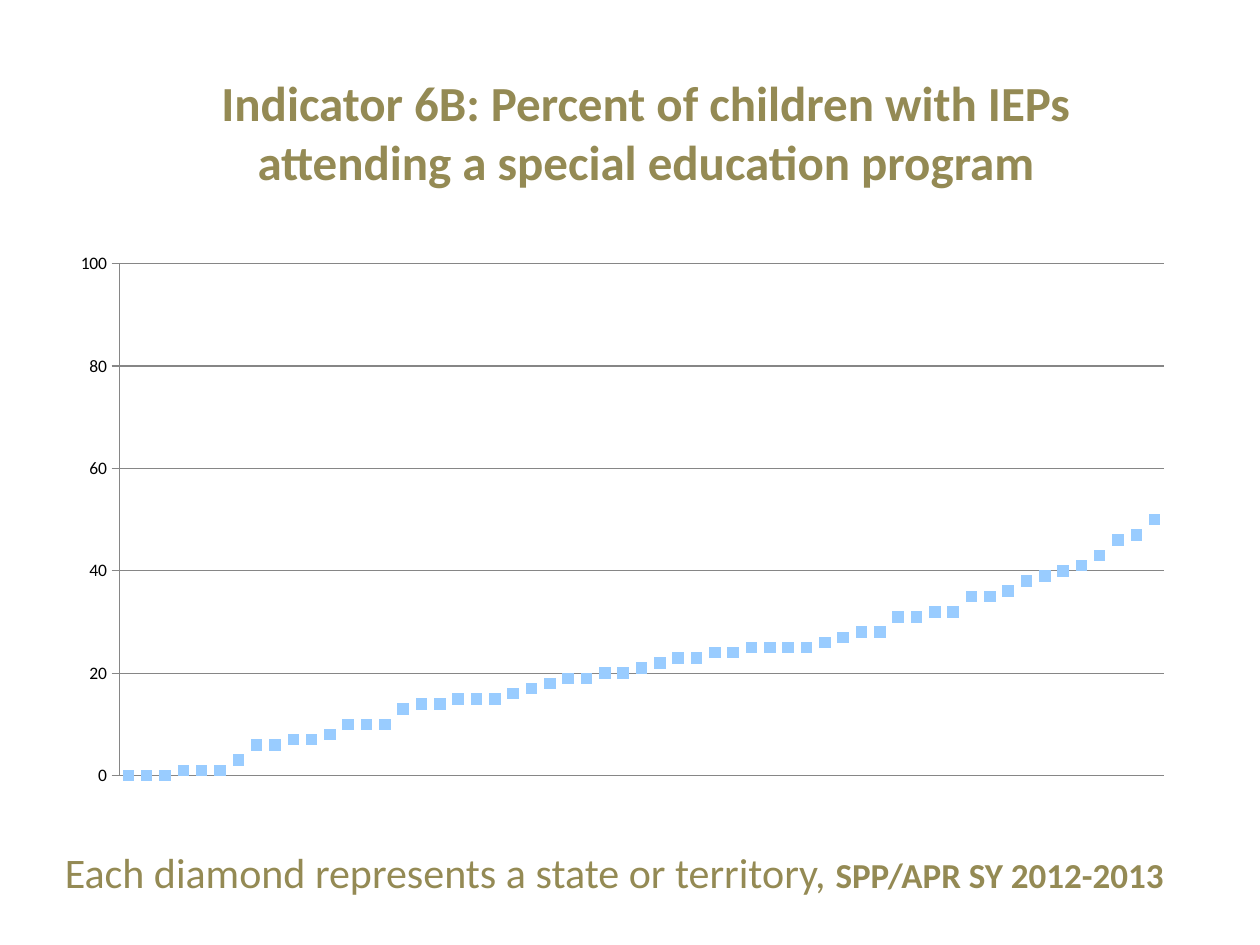
from dataclasses import dataclass
from typing import Any

from lxml import etree
from pptx import Presentation
from pptx import util as u
from pptx.chart.data import CategoryChartData
from pptx.dml.color import RGBColor
from pptx.enum import chart as ch, text as tx
from pptx.oxml.ns import qn

COLORS = {"olive": "948A54", "marker": "99CCFF", "grid": "868686", "label": "000000"}
FONT = "Calibri"
WIDTH, HEIGHT = 10, 7.5
COLUMNS, ROWS = 120, 90

STATE_PERCENTS = [
    0, 0, 0, 1, 1, 1, 3, 6, 6, 7, 7, 8, 10, 10, 10, 13, 14, 14, 15,
    15, 15, 16, 17, 18, 19, 19, 20, 20, 21, 22, 23, 23, 24, 24, 25, 25, 25, 25,
    26, 27, 28, 28, 31, 31, 32, 32, 35, 35, 36, 38, 39, 40, 41, 43, 46, 47, 50,
]


@dataclass
class IndicatorSlide:
    slide: Any
    colors: dict
    font: str

    def box(self, col, row, cols, rows):
        across, down = WIDTH / COLUMNS, HEIGHT / ROWS
        return [u.Inches(n * step) for n, step in
                ((col, across), (row, down), (cols, across), (rows, down))]

    def style(self, font, size, color, bold=False):
        font.name, font.size, font.bold = self.font, u.Pt(size), bold
        font.color.rgb = RGBColor.from_string(self.colors[color])

    def text(self, area, lines, align, anchor, fit=tx.MSO_AUTO_SIZE.NONE):
        frame = self.slide.shapes.add_textbox(*self.box(*area)).text_frame
        frame.word_wrap = True
        frame.auto_size = fit
        frame.vertical_anchor = anchor
        paragraph = frame.paragraphs[0]
        paragraph.alignment = align
        for number, runs in enumerate(lines):
            if number:
                paragraph.add_line_break()
            for words, size, bold in runs:
                run = paragraph.add_run()
                run.text = words
                self.style(run.font, size, "olive", bold)

    def line(self, line_format):
        line_format.width = u.Pt(0.75)
        line_format.color.rgb = RGBColor.from_string(self.colors["grid"])

    def place_plot(self, chart, **shares):
        plot_area = chart._chartSpace.chart.plotArea
        for old in plot_area.findall(qn("c:layout")):
            plot_area.remove(old)
        layout = etree.Element(qn("c:layout"))
        manual = etree.SubElement(layout, qn("c:manualLayout"))
        settings = {"layoutTarget": "inner", "xMode": "edge", "yMode": "edge", **shares}
        for tag, value in settings.items():
            etree.SubElement(manual, qn(f"c:{tag}")).set("val", str(value))
        plot_area.insert(0, layout)

    def dot_chart(self, area, values, top, step):
        data = CategoryChartData(number_format="0")
        data.categories = [str(n) for n in range(1, len(values) + 1)]
        data.add_series("Series 1", values)
        chart = self.slide.shapes.add_chart(
            ch.XL_CHART_TYPE.LINE_MARKERS_STACKED, *self.box(*area), data).chart
        chart.has_legend = chart.has_title = False
        self.style(chart.font, 10, "label")
        self.place_plot(chart, x=0.05, y=0.04, w=0.93, h=0.92)
        chart.plots[0].vary_by_categories = False
        chart.category_axis.visible = False

        percent = chart.value_axis
        percent.minimum_scale, percent.maximum_scale = 0, top
        percent.major_unit = step
        percent.major_tick_mark = ch.XL_TICK_MARK.OUTSIDE
        percent.tick_labels.number_format = "0"
        percent.tick_labels.number_format_is_linked = False
        percent.has_major_gridlines = True
        self.line(percent.major_gridlines.format.line)
        self.line(percent.format.line)

        states = chart.plots[0].series[0]
        states.smooth = False
        states.format.line.fill.background()
        marker = states.marker
        marker.style, marker.size = ch.XL_MARKER_STYLE.SQUARE, 6
        marker.format.fill.solid()
        marker.format.fill.fore_color.rgb = RGBColor.from_string(self.colors["marker"])
        marker.format.line.fill.background()


def main():
    deck = Presentation()
    deck.slide_width, deck.slide_height = u.Inches(WIDTH), u.Inches(HEIGHT)
    page = IndicatorSlide(deck.slides.add_slide(deck.slide_layouts[6]), COLORS, FONT)
    page.text((5, 6, 113, 13),
              [[("Indicator 6B: Percent of children with IEPs", 28, True)],
               [("attending a special education program", 28, True)]],
              tx.PP_ALIGN.CENTER, tx.MSO_ANCHOR.MIDDLE)
    page.text((5, 80, 113, 6),
              [[("Each diamond represents a state or territory, ", 24, False),
                ("SPP/APR SY 2012-2013", 20, True)]],
              tx.PP_ALIGN.LEFT, tx.MSO_ANCHOR.TOP, tx.MSO_AUTO_SIZE.SHAPE_TO_FIT_TEXT)
    page.dot_chart((6, 23, 107, 53), STATE_PERCENTS, top=100, step=20)
    deck.save("out.pptx")


if __name__ == "__main__":
    main()
